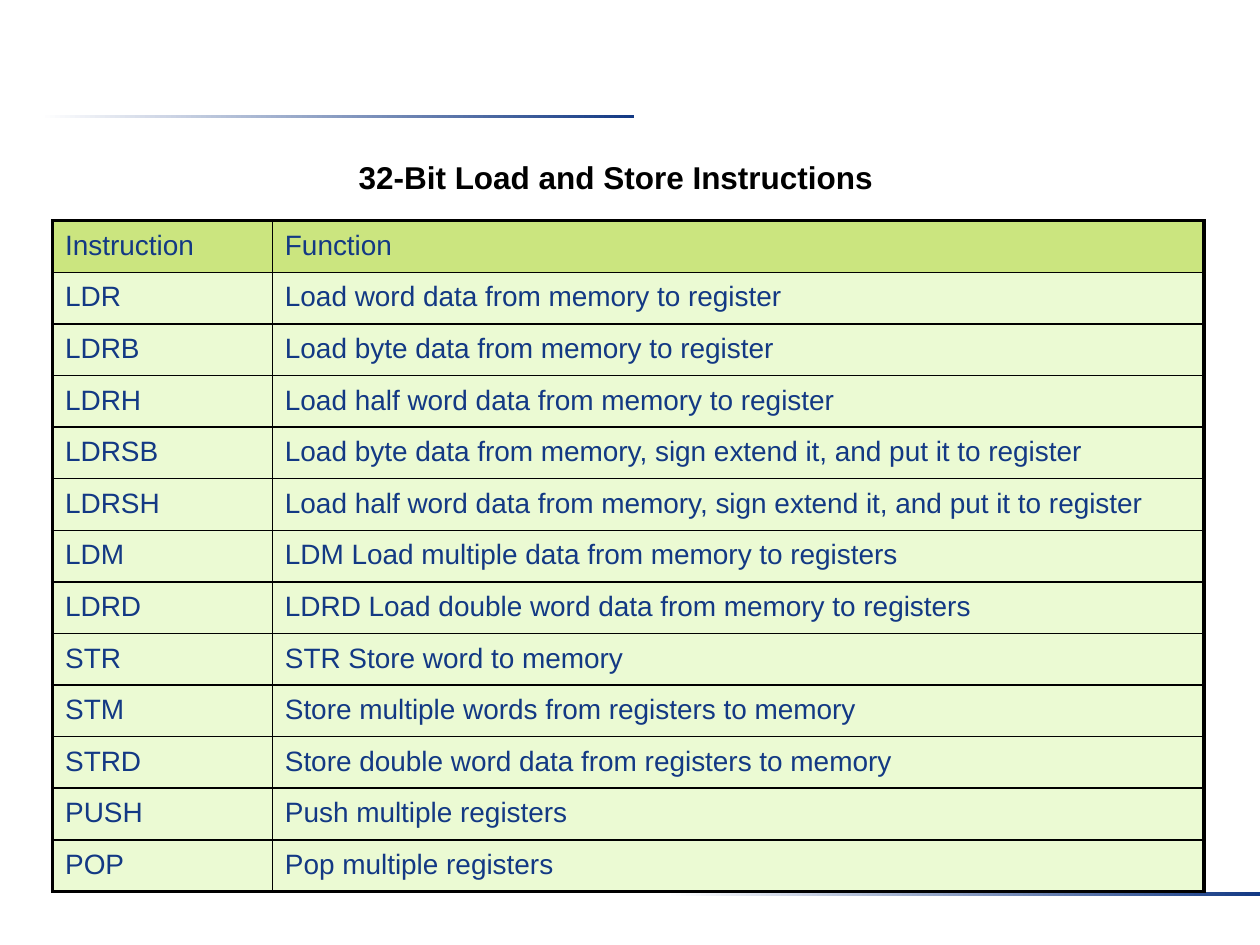
import pptx
import pptx.dml.color
import pptx.enum.shapes
import pptx.enum.text
import pptx.oxml
import pptx.oxml.ns
import pptx.util

Cm, Pt = pptx.util.Cm, pptx.util.Pt
COLORS = {"navy": "133984", "white": "FFFFFF", "black": "000000",
          "header": "99CC00", "body": "D8F6A8"}
THIN, THICK = 1, 2.25

ROWS = [
    ("Instruction", "Function"),
    ("LDR", "Load word data from memory to register"),
    ("LDRB", "Load byte data from memory to register"),
    ("LDRH", "Load half word data from memory to register"),
    ("LDRSB", "Load byte data from memory, sign extend it, and put it to register"),
    ("LDRSH", "Load half word data from memory, sign extend it, and put it to register"),
    ("LDM", "LDM Load multiple data from memory to registers"),
    ("LDRD", "LDRD Load double word data from memory to registers"),
    ("STR", "STR Store word to memory"),
    ("STM", "Store multiple words from registers to memory"),
    ("STRD", "Store double word data from registers to memory"),
    ("PUSH", "Push multiple registers"),
    ("POP", "Pop multiple registers"),
]


def rgb(name):
    return pptx.dml.color.RGBColor.from_string(COLORS[name])


class Deck:
    """Slide style and the current slide."""

    def __init__(self, width, height):
        self.prs = pptx.Presentation()
        self.prs.slide_width, self.prs.slide_height = Cm(width), Cm(height)
        self.slide = self.prs.slides.add_slide(self.prs.slide_layouts[6])

    def text(self, tf, content, color, **fmt):
        p = tf.paragraphs[0]
        p.line_spacing = 1.1
        r = p.add_run()
        r.text = content
        r.font.color.rgb = rgb(color)
        for key, value in {"name": "Arial", **fmt}.items():
            setattr(r.font, key, value)

    def rule(self, x, y, w, h):
        sp = self.slide.shapes.add_shape(
            pptx.enum.shapes.MSO_SHAPE.RECTANGLE, Cm(x), Cm(y), Cm(w), Cm(h))
        sp.shadow.inherit = False
        sp.line.fill.background()
        sp.fill.gradient()
        sp.fill.gradient_angle = 0
        for stop, color in zip(sp.fill.gradient_stops, ("white", "navy")):
            stop.color.rgb = rgb(color)

    def title(self, x, y, w, h, content):
        tf = self.slide.shapes.add_textbox(Cm(x), Cm(y), Cm(w), Cm(h)).text_frame
        tf.word_wrap = True
        tf.vertical_anchor = pptx.enum.text.MSO_ANCHOR.MIDDLE
        self.text(tf, content, "black", size=Pt(18), bold=True)

    def cell(self, cell, content, fill, borders):
        self.text(cell.text_frame, content, "navy", size=Pt(16))
        cell.fill.solid()
        cell.fill.fore_color.rgb = rgb(fill)
        # Half-transparent fill, then borders ahead of it
        tcPr = cell._tc.get_or_add_tcPr()
        clr = tcPr.find(".//" + pptx.oxml.ns.qn("a:srgbClr"))
        clr.append(pptx.oxml.parse_xml(
            f'<a:alpha {pptx.oxml.ns.nsdecls("a")} val="50000"/>'))
        for i, (side, width) in enumerate(borders.items()):
            tcPr.insert(i, pptx.oxml.parse_xml(
                f'<a:ln{side} {pptx.oxml.ns.nsdecls("a")} w="{Pt(width)}">'
                f'<a:solidFill><a:srgbClr val="{COLORS["black"]}"/></a:solidFill>'
                f'</a:ln{side}>'))

    def table(self, x, y, col_widths, row_height, rows):
        n_rows, n_cols = len(rows), len(col_widths)
        tbl = self.slide.shapes.add_table(
            n_rows, n_cols, Cm(x), Cm(y),
            Cm(sum(col_widths)), Cm(row_height * n_rows)).table
        tbl.first_row = tbl.horz_banding = False
        for col, width in zip(tbl.columns, col_widths):
            col.width = Cm(width)
        for i, row in enumerate(rows):
            tbl.rows[i].height = Cm(row_height)
            for j, content in enumerate(row):
                # Thick outer frame, thin inner grid
                outer = {"L": j == 0, "R": j == n_cols - 1,
                         "T": i == 0, "B": i == n_rows - 1}
                borders = {k: THICK if v else THIN for k, v in outer.items()}
                self.cell(tbl.cell(i, j), content, "body" if i else "header", borders)


def main():
    deck = Deck(25.4, 19.05)
    # Decorative rules
    deck.rule(0.8, 2.31, 11.98, 0.08)
    deck.rule(13.42, 17.98, 11.98, 0.08)
    # Heading and instruction table
    deck.title(6.98, 2.97, 11.02, 1.1, "32-Bit Load and Store Instructions")
    deck.table(1.06, 4.45, (4.43, 18.78), 1.04, ROWS)
    deck.prs.save("out.pptx")


if __name__ == "__main__":
    main()
